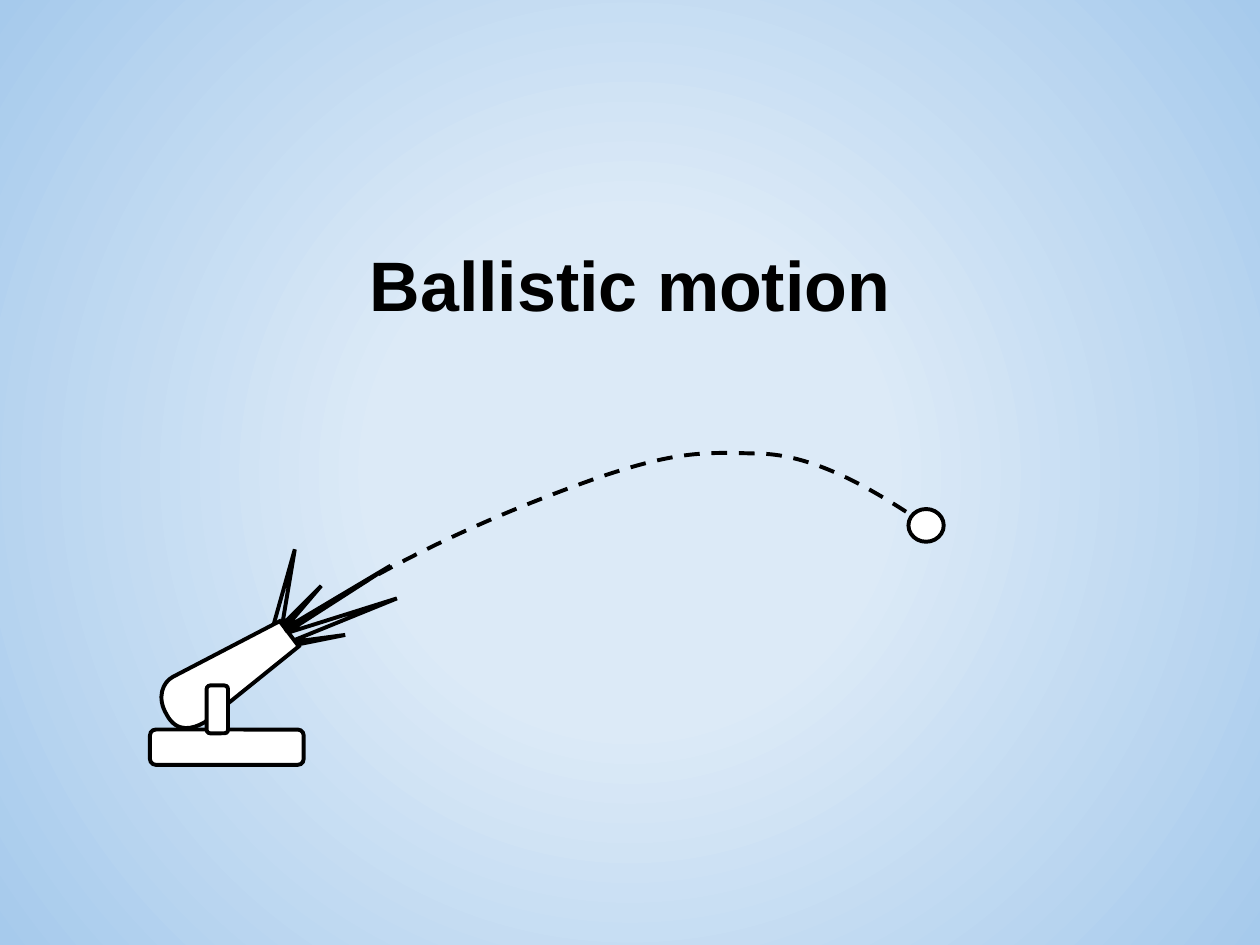
from collections import namedtuple

from lxml.etree import SubElement
from pptx import Presentation
from pptx.dml.color import RGBColor
from pptx.enum.dml import MSO_LINE
from pptx.enum.shapes import MSO_SHAPE
from pptx.enum.text import MSO_ANCHOR, MSO_AUTO_SIZE, PP_ALIGN
from pptx.oxml.ns import qn
from pptx.util import Pt

PX = 9144
BLACK = RGBColor(0x00, 0x00, 0x00)
WHITE = RGBColor(0xFF, 0xFF, 0xFF)
PALE_BLUE = RGBColor(0xDC, 0xEA, 0xF7)
SKY_BLUE = RGBColor(0xA6, 0xCA, 0xEC)

Box = namedtuple("Box", "left top width height")


def style(shape, fill):
    """Give a shape its mitred black outline and its white or empty fill."""
    shape.shadow.inherit = False
    shape.line.color.rgb = BLACK
    shape.line.width = Pt(2.25)
    outline = next(shape.element.iter(qn("a:ln")))
    SubElement(outline, qn("a:miter"), lim="800000")
    if fill is None:
        shape.fill.background()
    else:
        shape.fill.solid()
        shape.fill.fore_color.rgb = fill
    return shape


def add_outline(page, box, start, segments, fill=None, close=False):
    """Draw lines (one point) and cubic curves (three points) relative to the box."""
    def place(point):
        return (box.left + point[0]) * PX, (box.top + point[1]) * PX

    builder = page.shapes.build_freeform(*place(start), scale=1.0)
    builder.add_line_segments([place(segment[-1]) for segment in segments], close=close)
    shape = builder.convert_to_shape()
    steps = list(shape.element.iter(qn("a:lnTo")))
    for step, segment in zip(steps, segments):
        if len(segment) == 3:
            step.tag = qn("a:cubicBezTo")
            for index, point in enumerate(segment[:2]):
                x, y = place(point)
                handle = step.makeelement(
                    qn("a:pt"), {"x": str(x - shape.left), "y": str(y - shape.top)})
                step.insert(index, handle)
    return style(shape, fill)


def add_part(page, box, kind, left, top, width, height):
    """Draw a white preset shape relative to the box."""
    shape = page.shapes.add_shape(
        kind, (box.left + left) * PX, (box.top + top) * PX, width * PX, height * PX)
    return style(shape, WHITE)


def paint_background(page):
    """Fill the page with a gradient that spreads from its centre."""
    fill = page.background.fill
    fill.gradient()
    for stop, color, position in zip(
            fill.gradient_stops, (PALE_BLUE, SKY_BLUE), (0.32, 1)):
        stop.color.rgb = color
        stop.position = position
    gradient = next(page.element.iter(qn("a:gradFill")))
    gradient.remove(gradient.find(qn("a:lin")))
    spread = SubElement(gradient, qn("a:path"), {"path": "circle"})
    SubElement(spread, qn("a:fillToRect"), dict.fromkeys("ltrb", "50000"))


def add_title(page, box, text):
    """Set the title placeholder in the box."""
    title = page.shapes.title
    title.left, title.top, title.width, title.height = (side * PX for side in box)
    frame = title.text_frame
    frame.text = text
    frame.word_wrap = True
    frame.auto_size = MSO_AUTO_SIZE.NONE
    frame.vertical_anchor = MSO_ANCHOR.TOP
    frame.margin_top = 4 * PX
    para = frame.paragraphs[0]
    para.alignment = PP_ALIGN.CENTER
    para.line_spacing = 0.9
    para.font.name = "Arial"
    para.font.size = Pt(40)
    para.font.bold = True
    para.font.color.rgb = BLACK


def add_cannon(page, box):
    """Draw the muzzle flash, tilted barrel, base and post."""
    flash = [(115, 0), (105, 60), (136, 29), (107, 63), (191, 13),
             (107, 67), (196, 39), (110, 74), (155, 68), (115, 76)]
    barrel = [((15, 75), (4, 82), (3, 98)),
              ((1, 115), (14, 119), (24, 120)),
              ((120, 113),),
              ((119, 88),)]
    add_outline(page, box, (97, 64), [(point,) for point in flash])
    add_outline(page, box, (24, 76), barrel, WHITE, close=True).rotation = 325.3
    add_part(page, box, MSO_SHAPE.ROUNDED_RECTANGLE, 0, 143, 122, 28)
    add_part(page, box, MSO_SHAPE.ROUNDED_RECTANGLE, 45, 108, 17, 38)


def add_flight(page, box):
    """Draw the ball and its dashed trajectory."""
    add_part(page, box, MSO_SHAPE.OVAL, 495, 44, 28, 26)
    trajectory = [((92, 79), (184, 42), (249, 19)),
                  ((314, -3), (335, -1), (377, 0)),
                  ((418, 1), (461, 25), (499, 50))]
    add_outline(page, box, (0, 141), trajectory).line.dash_style = MSO_LINE.DASH


def main():
    """Build and save the deck."""
    deck = Presentation()
    deck.slide_width, deck.slide_height = 1000 * PX, 750 * PX
    page = deck.slides.add_slide(deck.slide_layouts[5])
    paint_background(page)
    add_title(page, Box(69, 195, 862, 97), "Ballistic motion")
    add_cannon(page, Box(119, 436, 196, 171))
    add_flight(page, Box(226, 360, 523, 141))
    deck.save("out.pptx")


if __name__ == "__main__":
    main()
